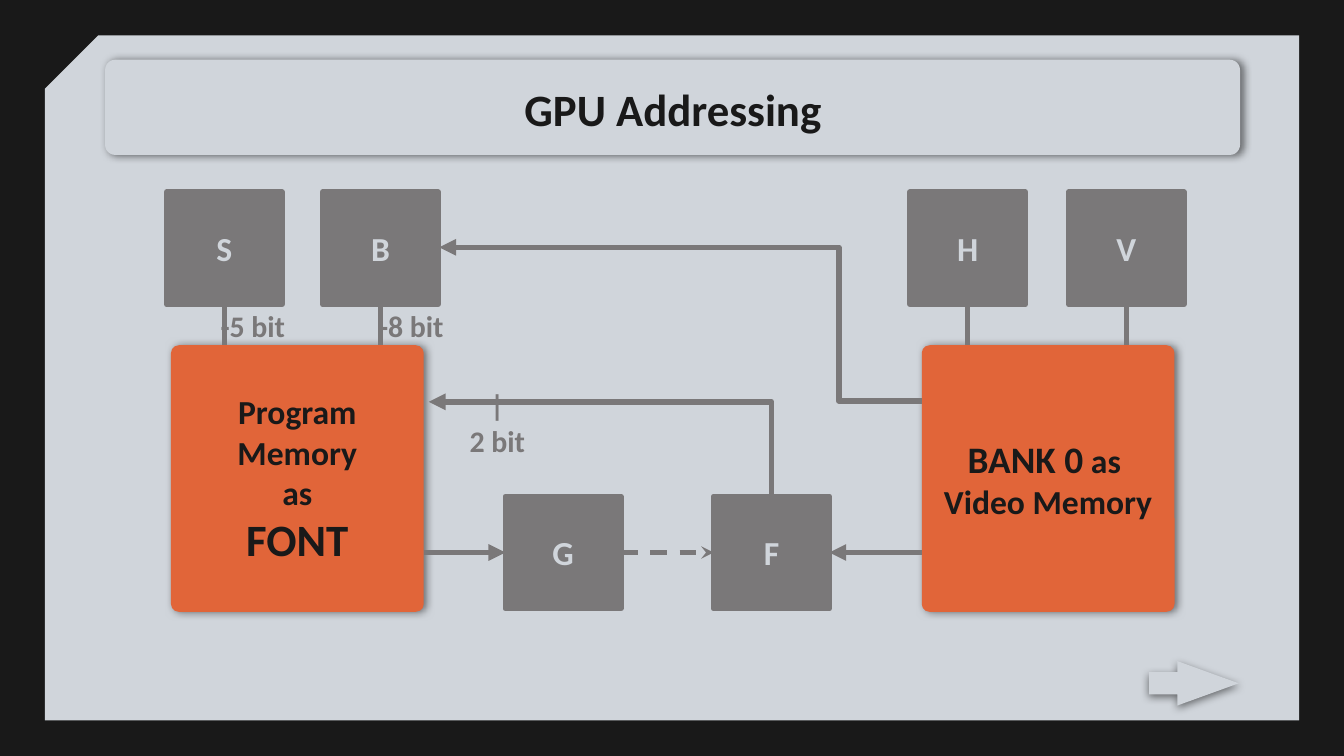
import pptx
import pptx.dml.color
import pptx.enum.dml
import pptx.enum.shapes
import pptx.enum.text
import pptx.oxml
import pptx.oxml.ns
import pptx.util
from lxml import etree

Pt = pptx.util.Pt
qn = pptx.oxml.ns.qn
SHAPES = pptx.enum.shapes.MSO_SHAPE
CONNECTORS = pptx.enum.shapes.MSO_CONNECTOR
ALIGN = pptx.enum.text.PP_ALIGN
ANCHOR = pptx.enum.text.MSO_ANCHOR

DARK, PALE, GRAY, ORANGE = "191919", "D0D5DB", "7A7879", "E16539"
TOP, LEFT, BOTTOM, RIGHT = range(4)


def color(hex_value):
    return pptx.dml.color.RGBColor.from_string(hex_value)


def write_text(shape, paragraphs, hex_color=DARK, align=ALIGN.CENTER, anchor=ANCHOR.MIDDLE):
    """Fill a shape with paragraphs, each a list of (text, size) runs."""
    frame = shape.text_frame
    frame.word_wrap = True
    frame.vertical_anchor = anchor
    frame.margin_left = frame.margin_right = Pt(7.2)
    frame.margin_top = frame.margin_bottom = Pt(7.2)
    for index, runs in enumerate(paragraphs):
        paragraph = frame.paragraphs[0] if index == 0 else frame.add_paragraph()
        paragraph.alignment = align
        for text, size in runs:
            run = paragraph.add_run()
            run.text = text
            run.font.name = "Calibri"
            run.font.size = Pt(size)
            run.font.bold = True
            run.font.color.rgb = color(hex_color)


def add_label(slide, left, top, width, height, paragraphs, **text_format):
    label = slide.shapes.add_textbox(Pt(left), Pt(top), Pt(width), Pt(height))
    write_text(label, paragraphs, **text_format)
    return label


def add_box(slide, kind, left, top, width, height, fill, adjustments=()):
    shape = slide.shapes.add_shape(kind, Pt(left), Pt(top), Pt(width), Pt(height))
    shape.shadow.inherit = False
    shape.fill.solid()
    shape.fill.fore_color.rgb = color(fill)
    shape.line.fill.background()
    for index, value in enumerate(adjustments):
        shape.adjustments[index] = value
    return shape


def add_shadow(shape, direction):
    """Give the shape a soft half-transparent shadow; direction in degrees."""
    effects = shape._element.spPr.find(qn("a:effectLst"))
    shadow = etree.SubElement(effects, qn("a:outerShdw"), blurRad=str(Pt(4.5)),
                              dist=str(Pt(1.5)), dir=str(direction * 60000),
                              algn="bl", rotWithShape="0")
    black = etree.SubElement(shadow, qn("a:srgbClr"), val="000000")
    etree.SubElement(black, qn("a:alpha"), val="50000")


def add_line(slide, start, end, kind=CONNECTORS.STRAIGHT, width=3, dash=None,
             head=None, tail=None, begin_at=None, end_at=None):
    """Draw a connector; begin_at and end_at are (shape, side) pairs to join."""
    line = slide.shapes.add_connector(kind, *(Pt(value) for value in (*start, *end)))
    if begin_at:
        line.begin_connect(*begin_at)
    if end_at:
        line.end_connect(*end_at)
    line.line.color.rgb = color(GRAY)
    line.line.width = Pt(width)
    if dash:
        line.line.dash_style = dash
    for tag, arrow in (("a:headEnd", head), ("a:tailEnd", tail)):
        if arrow:
            etree.SubElement(line.line._get_or_add_ln(), qn(tag), type=arrow)
    etree.SubElement(line._element.spPr, qn("a:effectLst"))
    return line


def draw_frame(slide, left, top, width, height):
    panel = add_box(slide, SHAPES.SNIP_1_RECTANGLE, left, top, width, height, PALE, [0.078])
    panel._element.spPr.find(qn("a:xfrm")).set("flipH", "1")
    banner = add_box(slide, SHAPES.ROUNDED_RECTANGLE, left + 32.3, top + 13,
                     width - 64, 51, PALE, [0.106])
    add_shadow(banner, 6)
    next_arrow = add_box(slide, SHAPES.RIGHT_ARROW, left + width - 80.4,
                         top + height - 31.8, 48, 23.8, PALE, [0.5, 1.38])
    add_shadow(next_arrow, 90)
    add_label(slide, left + 33, top + 16.3, width - 65, 45.4, [[("GPU Addressing", 24)]])


def draw_memory(slide, left, top, width, height, paragraphs):
    memory = add_box(slide, SHAPES.ROUNDED_RECTANGLE, left, top, width, height, ORANGE, [0.031])
    add_shadow(memory, 6)
    write_text(memory, paragraphs)


def draw_register(slide, left, top, name):
    register = add_box(slide, SHAPES.RECTANGLE, left, top, 62, 60, GRAY)
    register.line.color.rgb = color(GRAY)
    register.line.width = Pt(3)
    write_text(register, [[(name, 18)]], hex_color=PALE)
    return register


def draw_addressing(slide, left, top, width, height):
    memory_top, memory_width = top + 82, 135.4
    font_left, video_left = left + 2.4, left + width - 140.6
    lower_row = top + 163
    flow = lower_row + 30

    for offset, text in ((106.8, "-8 bit"), (21.9, "-5 bit")):
        add_label(slide, left + offset, top + 54.7, 88, 34, [[(text, 16)]],
                  hex_color=GRAY, align=ALIGN.LEFT, anchor=ANCHOR.TOP)

    draw_memory(slide, font_left, memory_top, memory_width, height - 82,
                [[("Program Memory", 18)], [("as", 18)], [("FONT", 24)]])
    draw_memory(slide, video_left, memory_top, memory_width, height - 82,
                [[("BANK 0", 20), (" as ", 18)], [("Video Memory", 18)]])

    for name, offset in (("S", 0), ("B", 83.6), ("H", 398.2), ("V", 483.2)):
        register = draw_register(slide, left + offset, top, name)
        center = left + offset + 31
        add_line(slide, (center, top + 60), (center, memory_top), begin_at=(register, BOTTOM))

    glyph = draw_register(slide, left + 181.5, lower_row, "G")
    font = draw_register(slide, left + 293.1, lower_row, "F")
    add_line(slide, (font_left + memory_width, flow), (left + 181.5, flow),
             tail="triangle", end_at=(glyph, LEFT))
    add_line(slide, (left + 243.5, flow), (left + 293.1, flow), width=2.25,
             dash=pptx.enum.dml.MSO_LINE.DASH, tail="stealth",
             begin_at=(glyph, RIGHT), end_at=(font, LEFT))
    add_line(slide, (left + 355.1, flow), (video_left, flow),
             head="triangle", begin_at=(font, RIGHT))

    bank_select = add_line(slide, (left + 146.2, top + 29.5), (video_left, top + 111.8),
                           kind=CONNECTORS.ELBOW, head="triangle")
    geometry = bank_select._element.spPr.find(qn("a:prstGeom"))
    etree.SubElement(geometry.find(qn("a:avLst")), qn("a:gd"), name="adj1", fmla="val 82800")
    font_select = add_line(slide, (left + 140.5, top + 112.3), (left + 324.1, lower_row),
                           kind=CONNECTORS.ELBOW, head="triangle")
    font_select._element.spPr.find(qn("a:prstGeom")).set("prst", "bentConnector2")

    add_label(slide, left + 134.7, top + 97.2, 85, 53, [[("|", 16)], [("2 bit", 16)]],
              hex_color=GRAY, anchor=ANCHOR.TOP)


def main():
    presentation = pptx.Presentation()
    presentation.slide_width, presentation.slide_height = Pt(720), Pt(405)
    slide = presentation.slides.add_slide(presentation.slide_layouts[6])
    slide.background.fill.solid()
    slide.background.fill.fore_color.rgb = color(DARK)
    draw_frame(slide, 24, 19, 672, 367)
    draw_addressing(slide, 89.2, 103, 545.2, 224.8)
    presentation.save("out.pptx")


if __name__ == "__main__":
    main()
